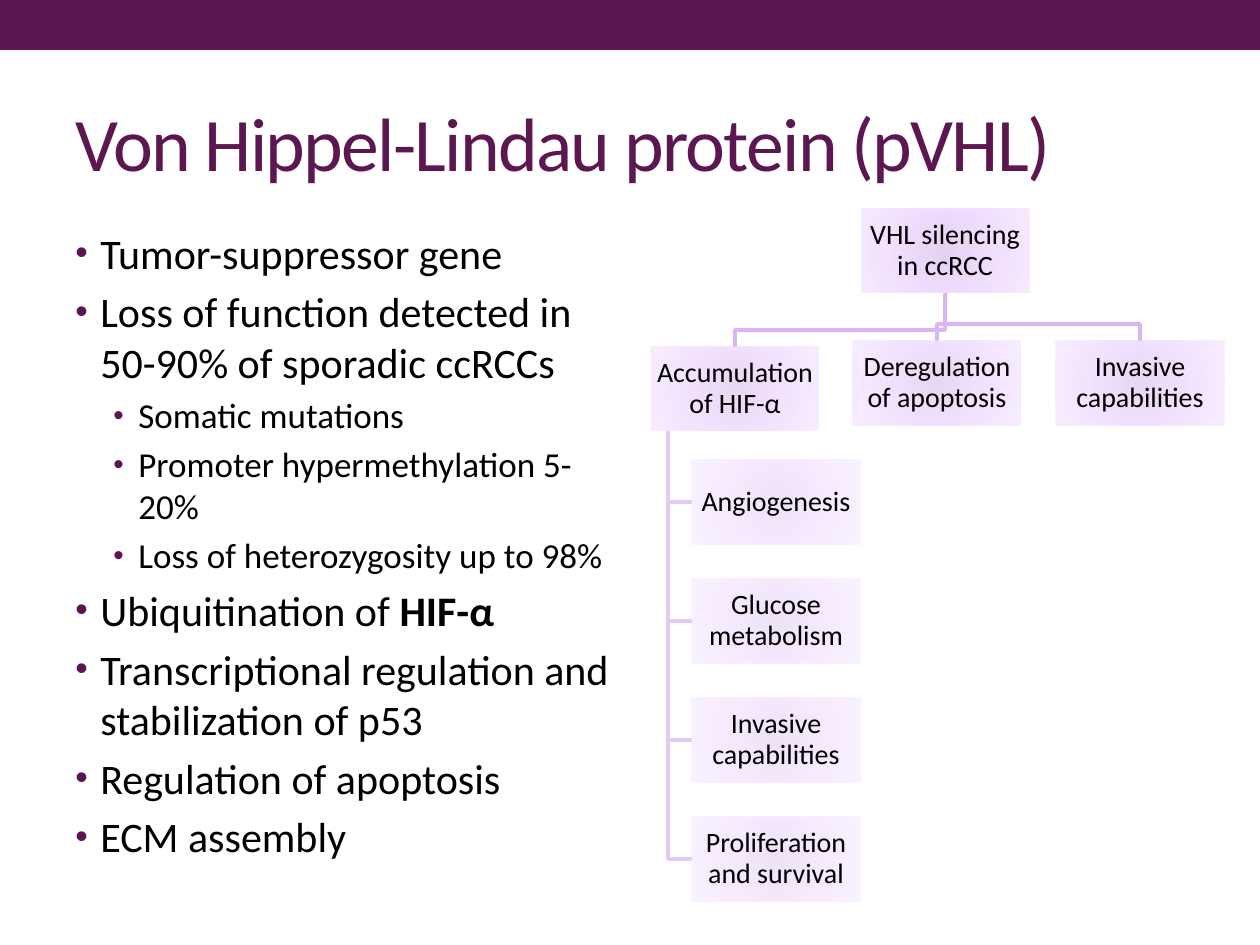
from dataclasses import dataclass

from lxml.etree import SubElement
from pptx import Presentation
from pptx.dml.color import RGBColor
from pptx.enum.shapes import MSO_SHAPE
from pptx.enum.text import MSO_ANCHOR, PP_ALIGN
from pptx.oxml import parse_xml
from pptx.oxml.ns import nsdecls, qn
from pptx.util import Emu, Pt

PLUM, BLACK = "5D1750", "000000"
STEM, RAIL = "DAB5F2", "E3C9F5"
STOPS = ((0, "DDC7ED"), (45, "EDD5FF"), (100, "F5E7FF"))
WIDE, HIGH = 168, 84


@dataclass
class Box:
    text: str
    left: int
    top: int
    alpha: int

    @property
    def mid(self) -> int:
        return self.left + WIDE // 2

    @property
    def foot(self) -> int:
        return self.top + HIGH


@dataclass
class Point:
    text: str
    level: int = 0
    bold: str = ""


def px(value: int) -> Emu:
    return Emu(round(value * 914400 / 126))


def color(code: str) -> RGBColor:
    return RGBColor.from_string(code)


def write(para, text: str, *, size: float, tint: str = BLACK,
          bold: bool = False, track: int = 0) -> None:
    run = para.add_run()
    run.text = text
    run.font.name = "Calibri"
    run.font.size = Pt(size)
    run.font.bold = bold
    run.font.color.rgb = color(tint)
    if track:
        run.font._element.set("spc", str(track))


def frame(slide, left: int, top: int, width: int, height: int):
    body = slide.shapes.add_textbox(px(left), px(top), px(width), px(height)).text_frame
    body.word_wrap = True
    return body


def block(slide, left: int, top: int, width: int, height: int):
    shape = slide.shapes.add_shape(
        MSO_SHAPE.RECTANGLE, px(left), px(top), px(width), px(height))
    shape.shadow.inherit = False
    shape.line.fill.background()
    return shape


def bullet(para, level: int) -> None:
    props = para._p.get_or_add_pPr()
    props.set("marL", str(px(63 if level else 25)))
    props.set("indent", str(px(-25)))
    hue = SubElement(props, qn("a:buClr"))
    SubElement(hue, qn("a:srgbClr"), val=PLUM)
    SubElement(props, qn("a:buSzPct"), val="85000")
    SubElement(props, qn("a:buFont"), typeface="Arial")
    SubElement(props, qn("a:buChar"), char="•")


def glow(shape, alpha: int) -> None:
    stops = "".join(
        f'<a:gs pos="{pos * 1000}"><a:srgbClr val="{code}">'
        f'<a:alpha val="{alpha * 1000}"/></a:srgbClr></a:gs>'
        for pos, code in STOPS)
    shape.fill.background()
    props = shape._element.spPr
    props.replace(props.find(qn("a:noFill")), parse_xml(
        f'<a:gradFill {nsdecls("a")}><a:gsLst>{stops}</a:gsLst><a:path path="circle">'
        '<a:fillToRect l="100000" t="100000" r="100000" b="100000"/>'
        '</a:path></a:gradFill>'))


def draw(slide, box: Box) -> None:
    shape = block(slide, box.left, box.top, WIDE, HIGH)
    glow(shape, box.alpha)
    body = shape.text_frame
    body.word_wrap = True
    body.vertical_anchor = MSO_ANCHOR.MIDDLE
    body.margin_left = body.margin_right = px(1)
    body.margin_top = body.margin_bottom = px(1)
    para = body.paragraphs[0]
    para.alignment = PP_ALIGN.CENTER
    para.line_spacing = 0.9
    write(para, box.text, size=16)


def link(slide, tint: str, *spots: tuple[int, int]) -> None:
    start, *rest = [(px(x), px(y)) for x, y in spots]
    pen = slide.shapes.build_freeform(*start)
    pen.add_line_segments(rest, close=False)
    shape = pen.convert_to_shape()
    shape.shadow.inherit = False
    shape.fill.background()
    shape.line.color.rgb = color(tint)
    shape.line.width = Pt(2.08)


def tree(slide) -> None:
    root = Box("VHL silencing in ccRCC", 861, 209, 80)
    hif = Box("Accumulation of HIF-α", 651, 347, 70)
    heads = [
        Box("Deregulation of apoptosis", 853, 341, 70),
        Box("Invasive capabilities", 1056, 341, 70),
        hif,
    ]
    names = ("Angiogenesis", "Glucose metabolism",
             "Invasive capabilities", "Proliferation and survival")
    leaves = [Box(name, 692, 460 + 119 * i, 50) for i, name in enumerate(names)]
    for head in heads:
        bend = head.top - 17
        link(slide, STEM, (root.mid, root.foot), (root.mid, bend),
             (head.mid, bend), (head.mid, head.top))
    rail = hif.left + 17
    for leaf in leaves:
        level = leaf.top + HIGH // 2
        link(slide, RAIL, (rail, hif.foot), (rail, level), (leaf.left, level))
    for box in (root, *heads, *leaves):
        draw(slide, box)


def points(slide) -> None:
    items = (
        Point("Tumor-suppressor gene"),
        Point("Loss of function detected in 50-90% of sporadic ccRCCs"),
        Point("Somatic mutations", 1),
        Point("Promoter hypermethylation 5-20%", 1),
        Point("Loss of heterozygosity up to 98%", 1),
        Point("Ubiquitination of ", bold="HIF-α"),
        Point("Transcriptional regulation and stabilization of p53"),
        Point("Regulation of apoptosis"),
        Point("ECM assembly"),
    )
    body = frame(slide, 63, 221, 567, 672)
    for i, item in enumerate(items):
        para = body.add_paragraph() if i else body.paragraphs[0]
        size = 20 if item.level else 24
        para.level = item.level
        para.space_before = Pt(size * 0.2)
        bullet(para, item.level)
        write(para, item.text, size=size)
        if item.bold:
            write(para, item.bold, size=size, bold=True)


def main() -> None:
    deck = Presentation()
    deck.slide_width, deck.slide_height = px(1260), px(945)
    slide = deck.slides.add_slide(deck.slide_layouts[6])
    band = block(slide, 0, 0, 1260, 50)
    band.fill.solid()
    band.fill.fore_color.rgb = color(PLUM)
    title = frame(slide, 63, 73, 1134, 136)
    title.vertical_anchor = MSO_ANCHOR.MIDDLE
    write(title.paragraphs[0], "Von Hippel-Lindau protein (pVHL)",
          size=43.2, tint=PLUM, track=-100)
    points(slide)
    tree(slide)
    deck.save("out.pptx")


if __name__ == "__main__":
    main()
